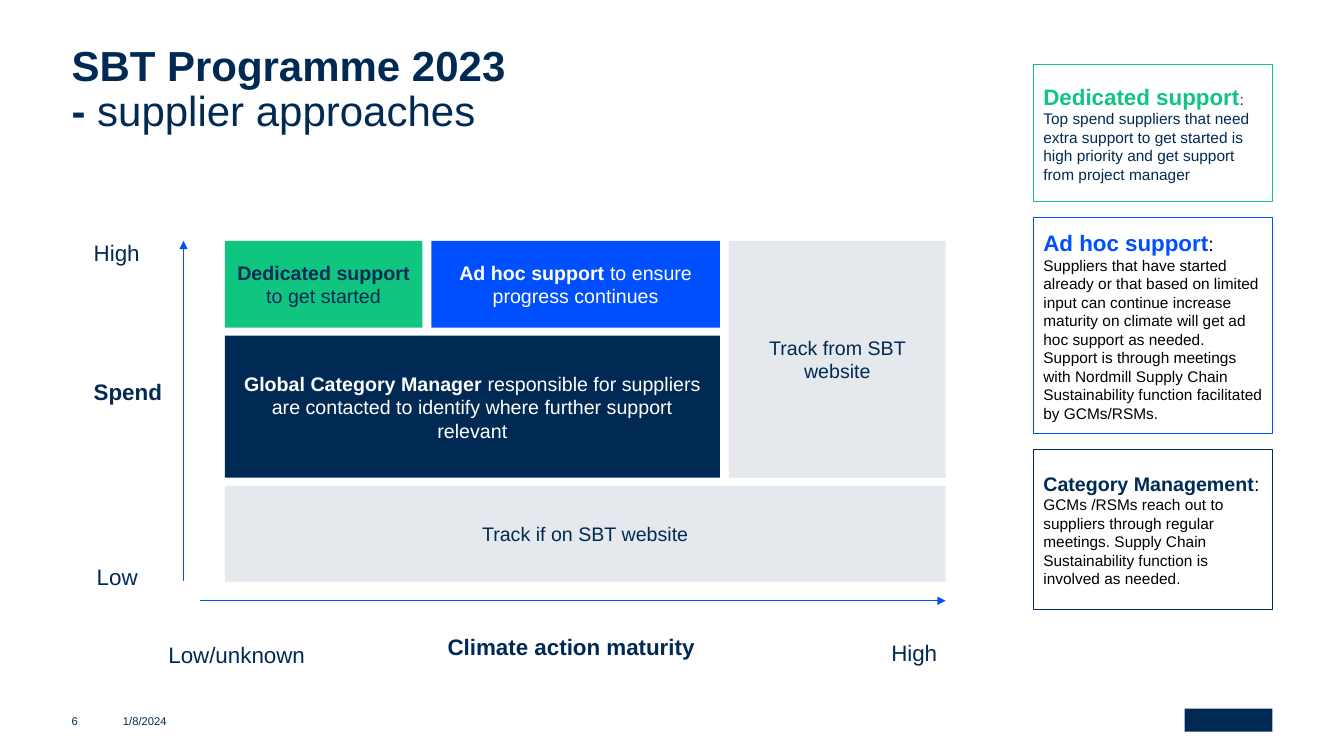
import pptx
import pptx.util
import pptx.dml.color
import pptx.enum.shapes
import pptx.enum.text
import pptx.oxml.ns
import lxml.etree

Inches = pptx.util.Inches
ALIGN = pptx.enum.text.PP_ALIGN
ANCHOR = pptx.enum.text.MSO_ANCHOR
COLORS = {"navy": "002A54", "green": "0FC580", "blue": "004FFF",
          "grey": "E5E9EE", "white": "FFFFFF", "black": "000000"}

# Every text is a list of paragraphs; a paragraph is a list of
# (text, size, colour, bold) runs.
TITLE = [[("SBT Programme 2023", 30, "navy", True)],
         [("- ", 30, "navy", True), ("supplier approaches", 30, "navy", False)]]

# left, top, width, height, text, bold
AXIS_LABELS = [
    (0.93, 2.37, 0.76, 0.31, "High", False),
    (0.93, 3.75, 0.83, 0.48, "Spend", True),
    (0.96, 5.59, 0.76, 0.31, "Low", False),
    (1.67, 6.36, 1.43, 0.31, "Low/unknown", False),
    (4.44, 6.28, 2.53, 0.31, "Climate action maturity", True),
    (8.84, 6.34, 0.76, 0.31, "High", False),
]
FOOTER = [(0.71, 0.51, "6"), (1.22, 0.76, "1/8/2024")]

# first and last column, first and last row, fill, text colour, bold and plain text
MATRIX = [
    (0, 0, 0, 0, "green", "navy", "Dedicated support ", "to get started"),
    (1, 1, 0, 0, "blue", "white", "Ad hoc support ", "to ensure progress continues"),
    (0, 1, 1, 1, "navy", "white", "Global Category Manager ",
     "responsible for suppliers are contacted to identify where further support relevant"),
    (2, 2, 0, 1, "grey", "navy", "", "Track from SBT website"),
    (0, 2, 2, 2, "grey", "navy", "", "Track if on SBT website"),
]
MATRIX_LEFT, MATRIX_TOP = 2.23, 2.39
COLUMN_WIDTHS, COLUMN_GAP = [1.96, 2.86, 2.15], 0.09
ROW_HEIGHTS, ROW_GAP = [0.86, 1.41, 0.95], 0.08
ARROWS = [((1.82, 5.76), (1.82, 2.39)), ((1.98, 5.96), (9.38, 5.96))]

# height, outline, text
CARDS = [
    (1.36, "green", [[
        ("Dedicated support", 16, "green", True),
        (": Top spend suppliers that need extra support to get started is high "
         "priority and get support from project manager", 11, "navy", False)]]),
    (2.14, "blue", [
        [("Ad hoc support", 16, "blue", True), (": ", 14, "black", False),
         ("Suppliers that have started already or that based on limited input can "
          "continue increase maturity on climate will get ad hoc support as needed.",
          11, "black", False)],
        [("Support is through meetings with Nordmill Supply Chain Sustainability "
          "function facilitated by GCMs/RSMs.", 11, "black", False)]]),
    (1.59, "navy", [[
        ("Category Management", 14, "navy", True), (": ", 14, "black", False),
        ("GCMs /RSMs reach out to suppliers through regular meetings. Supply Chain "
         "Sustainability function is involved as needed.", 11, "black", False)]]),
]
CARD_LEFT, CARD_TOP, CARD_WIDTH, CARD_GAP = 10.25, 0.64, 2.37, 0.16


def rgb(name):
    return pptx.dml.color.RGBColor.from_string(COLORS[name])


def write(frame, paragraphs, align=ALIGN.LEFT, anchor=ANCHOR.TOP, spacing=1.0):
    frame.word_wrap = True
    frame.vertical_anchor = anchor
    for index, runs in enumerate(paragraphs):
        paragraph = frame.add_paragraph() if index else frame.paragraphs[0]
        paragraph.alignment = align
        paragraph.line_spacing = spacing
        for text, size, color, bold in runs:
            run = paragraph.add_run()
            run.text = text
            font_format = {"name": "Arial", "size": pptx.util.Pt(size), "bold": bold}
            for attribute, value in font_format.items():
                setattr(run.font, attribute, value)
            run.font.color.rgb = rgb(color)


def add_label(slide, box, paragraphs, **layout):
    """Add a text box without insets."""
    frame = slide.shapes.add_textbox(*map(Inches, box)).text_frame
    for side in ("left", "right", "top", "bottom"):
        setattr(frame, "margin_" + side, 0)
    write(frame, paragraphs, **layout)


def add_block(slide, box, fill, outline=None):
    block = slide.shapes.add_shape(
        pptx.enum.shapes.MSO_SHAPE.RECTANGLE, *map(Inches, box))
    block.shadow.inherit = False
    block.fill.solid()
    block.fill.fore_color.rgb = rgb(fill)
    if outline:
        block.line.color.rgb = rgb(outline)
        block.line.width = pptx.util.Pt(1)
    else:
        block.line.fill.background()
    return block


def add_arrow(slide, start, end):
    arrow = slide.shapes.add_connector(
        pptx.enum.shapes.MSO_CONNECTOR.STRAIGHT, *map(Inches, start + end))
    arrow.line.color.rgb = rgb("blue")
    arrow.line.width = pptx.util.Pt(1)
    qn = pptx.oxml.ns.qn
    properties = arrow.element.spPr
    lxml.etree.SubElement(properties.find(qn("a:ln")), qn("a:tailEnd"), type="triangle")
    lxml.etree.SubElement(properties, qn("a:effectLst"))


def span(origin, sizes, gap, first, last):
    """Return the start and length of the tracks first to last."""
    start = origin + sum(sizes[:first]) + gap * first
    return start, sum(sizes[first:last + 1]) + gap * (last - first)


def main():
    deck = pptx.Presentation()
    deck.slide_width, deck.slide_height = Inches(13.33), Inches(7.5)
    slide = deck.slides.add_slide(deck.slide_layouts[6])

    add_label(slide, (0.71, 0.45, 9.3, 1.07), TITLE, spacing=0.9)
    for left, width, text in FOOTER:
        add_label(slide, (left, 6.95, width, 0.4), [[(text, 8, "navy", False)]],
                  anchor=ANCHOR.MIDDLE)
    add_block(slide, (11.75, 7.03, 0.87, 0.23), "navy")

    for start, end in ARROWS:
        add_arrow(slide, start, end)
    for *box, text, bold in AXIS_LABELS:
        add_label(slide, box, [[(text, 16, "navy", bold)]])

    for col_a, col_b, row_a, row_b, fill, color, strong, plain in MATRIX:
        left, width = span(MATRIX_LEFT, COLUMN_WIDTHS, COLUMN_GAP, col_a, col_b)
        top, height = span(MATRIX_TOP, ROW_HEIGHTS, ROW_GAP, row_a, row_b)
        block = add_block(slide, (left, top, width, height), fill)
        runs = [(strong, 14, color, True)] if strong else []
        write(block.text_frame, [runs + [(plain, 14, color, False)]],
              align=ALIGN.CENTER, anchor=ANCHOR.MIDDLE)

    top = CARD_TOP
    for height, outline, paragraphs in CARDS:
        card = add_block(slide, (CARD_LEFT, top, CARD_WIDTH, height), "white", outline)
        write(card.text_frame, paragraphs, anchor=ANCHOR.MIDDLE)
        top += height + CARD_GAP

    deck.save("out.pptx")


if __name__ == "__main__":
    main()
